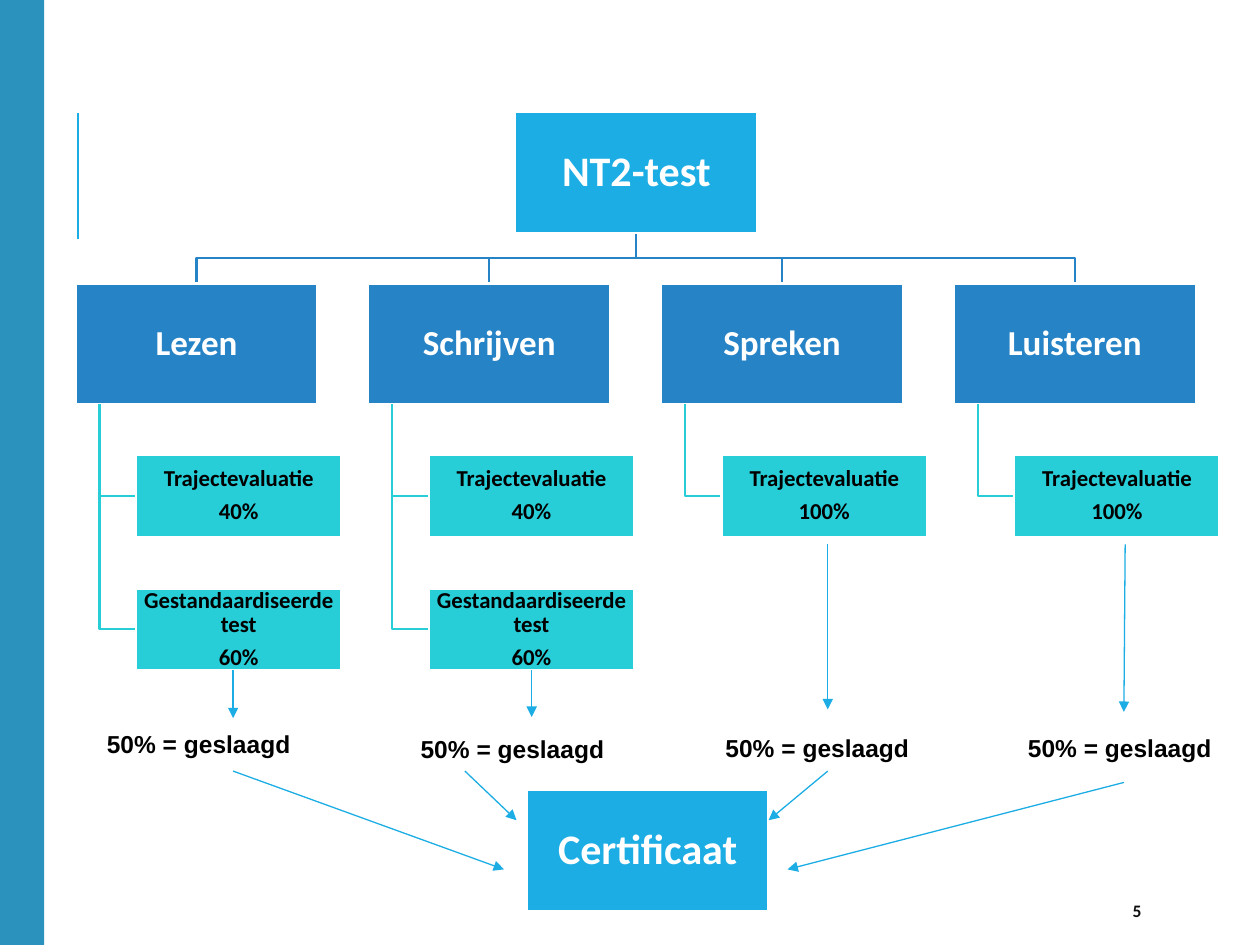
from lxml import etree
from pptx import Presentation
from pptx.dml.color import RGBColor
from pptx.enum.shapes import MSO_CONNECTOR, MSO_SHAPE
from pptx.enum.text import MSO_ANCHOR, PP_ALIGN
from pptx.oxml.ns import qn
from pptx.util import Inches, Pt

RECT = MSO_SHAPE.RECTANGLE
LINE = MSO_CONNECTOR.STRAIGHT
MID = MSO_ANCHOR.MIDDLE
TOP = MSO_ANCHOR.TOP
MITTE = PP_ALIGN.CENTER
LEFT = PP_ALIGN.LEFT

SKY, BLUE, TEAL, SIDE = "1CADE4", "2683C6", "27CED7", "2B92BE"
WHITE, BLACK, DARK = "FFFFFF", "000000", "0D0D0D"

ROOT = "NT2-test"
GOAL = "Certificaat"
PASS = "50% = geslaagd"
TRACK = "Trajectevaluatie"
EXAM = "Gestandaardiseerde test"
SKILLS = [
    ("Lezen", [(TRACK, "40%"), (EXAM, "60%")]),
    ("Schrijven", [(TRACK, "40%"), (EXAM, "60%")]),
    ("Spreken", [(TRACK, "100%")]),
    ("Luisteren", [(TRACK, "100%")]),
]
NOTES = [(0.75, 5.74), (3.24, 5.78), (5.66, 5.77), (8.06, 5.77)]
ARROWS = [
    (1.85, 5.32, 1.85, 5.7),
    (4.22, 5.32, 4.22, 5.69),
    (6.57, 4.32, 6.57, 5.63),
    (8.93, 4.32, 8.92, 5.65),
    (8.92, 6.21, 6.25, 6.9),
    (1.85, 6.12, 4, 6.9),
    (6.57, 6.12, 6.1, 6.51),
    (3.69, 6.12, 4.1, 6.51),
]

WIDE, HIGH = 1.92, 0.96
LEAF_W, LEAF_H, LEAF_GAP = 1.63, 0.65, 1.06
ROOT_X, ROOT_Y = 4.09, 0.89
ROW_X, ROW_Y, ROW_END = 0.6, 2.25, 7.57
LEAF_Y, INDENT, STEM = 3.61, 0.48, 0.19
STEP = (ROW_END - ROW_X) / (len(SKILLS) - 1)

deck = Presentation()
deck.slide_width, deck.slide_height = Inches(10), Inches(7.5)
slide = deck.slides.add_slide(deck.slide_layouts[6])
shapes = slide.shapes


def rgb(code):
    """Turn a hex string into a colour."""
    return RGBColor.from_string(code)


def write(frame, lines, size, color, font="Calibri", bold=True, align=LEFT, after=0):
    """Fill a text frame, one paragraph per line."""
    for i, text in enumerate(lines):
        para = frame.paragraphs[0] if i == 0 else frame.add_paragraph()
        para.alignment = align
        if after:
            para.line_spacing = 0.9
            para.space_after = Pt(after)
        run = para.add_run()
        run.text = text
        run.font.size, run.font.name, run.font.bold = Pt(size), font, bold
        run.font.color.rgb = rgb(color)


def block(x, y, w, h, fill):
    """Add a plain filled rectangle."""
    shape = shapes.add_shape(RECT, Inches(x), Inches(y), Inches(w), Inches(h))
    shape.shadow.inherit = False
    shape.fill.solid()
    shape.fill.fore_color.rgb = rgb(fill)
    shape.line.fill.background()
    return shape


def node(x, y, w, h, fill, lines, size, color=WHITE, pad=0.01):
    """Add a chart box with centred bold text."""
    shape = block(x, y, w, h, fill)
    shape.line.color.rgb = rgb(WHITE)
    shape.line.width = Pt(1.25)
    frame = shape.text_frame
    frame.word_wrap = True
    frame.vertical_anchor = MID
    frame.margin_left = frame.margin_right = Inches(pad)
    frame.margin_top = frame.margin_bottom = Inches(pad)
    write(frame, lines, size, color, align=MITTE, after=round(size * 0.35, 2))


def label(x, y, w, h, text, size, color, font, bold, anchor, wrap):
    """Add a free text box."""
    frame = shapes.add_textbox(Inches(x), Inches(y), Inches(w), Inches(h)).text_frame
    frame.word_wrap = wrap
    frame.vertical_anchor = anchor
    write(frame, [text], size, color, font, bold)


def branch(points, color):
    """Draw an open bent line through the points."""
    spots = [(Inches(x), Inches(y)) for x, y in points]
    pen = shapes.build_freeform(*spots[0], scale=1.0)
    pen.add_line_segments(spots[1:], close=False)
    shape = pen.convert_to_shape()
    shape.shadow.inherit = False
    shape.fill.background()
    shape.line.color.rgb = rgb(color)
    shape.line.width = Pt(1.25)


def rule(x1, y1, x2, y2, width, arrow=False):
    """Draw a straight line, with an arrowhead if asked."""
    line = shapes.add_connector(LINE, Inches(x1), Inches(y1), Inches(x2), Inches(y2))
    line.line.color.rgb = rgb(SKY)
    line.line.width = Pt(width)
    if arrow:
        etree.SubElement(line.line._get_or_add_ln(), qn("a:tailEnd"), type="triangle")
    etree.SubElement(line._element.spPr, qn("a:effectLst"))


def skill(x, name, tests):
    """Draw one skill with its tests and branches."""
    mid, bar = ROOT_X + WIDE / 2, (ROOT_Y + HIGH + ROW_Y) / 2
    top = x + WIDE / 2
    branch([(mid, ROOT_Y + HIGH), (mid, bar), (top, bar), (top, ROW_Y)], BLUE)
    node(x, ROW_Y, WIDE, HIGH, BLUE, [name], 20)
    for i, lines in enumerate(tests):
        y = LEAF_Y + i * LEAF_GAP
        side = y + LEAF_H / 2
        stem = x + STEM
        branch([(stem, ROW_Y + HIGH), (stem, side), (x + INDENT, side)], TEAL)
        node(x + INDENT, y, LEAF_W, LEAF_H, TEAL, lines, 13, BLACK)


rule(0.62, 1.9, 0.62, 0.9, 1.5)
block(0, 0, 0.35, 7.5, SIDE)
label(8.89, 7.08, 0.8, 0.3, "5", 10, DARK, "Calibri", True, MID, True)
for i, (name, tests) in enumerate(SKILLS):
    skill(ROW_X + i * STEP, name, tests)
node(ROOT_X, ROOT_Y, WIDE, HIGH, SKY, [ROOT], 24, pad=0.02)
node(4.18, 6.27, WIDE, HIGH, SKY, [GOAL], 24, pad=0.02)
for x, y in NOTES:
    label(x, y, 1.66, 0.34, PASS, 14, BLACK, "Arial", True, TOP, False)
for ends in ARROWS:
    rule(*ends, 0.75, True)

deck.save("out.pptx")
